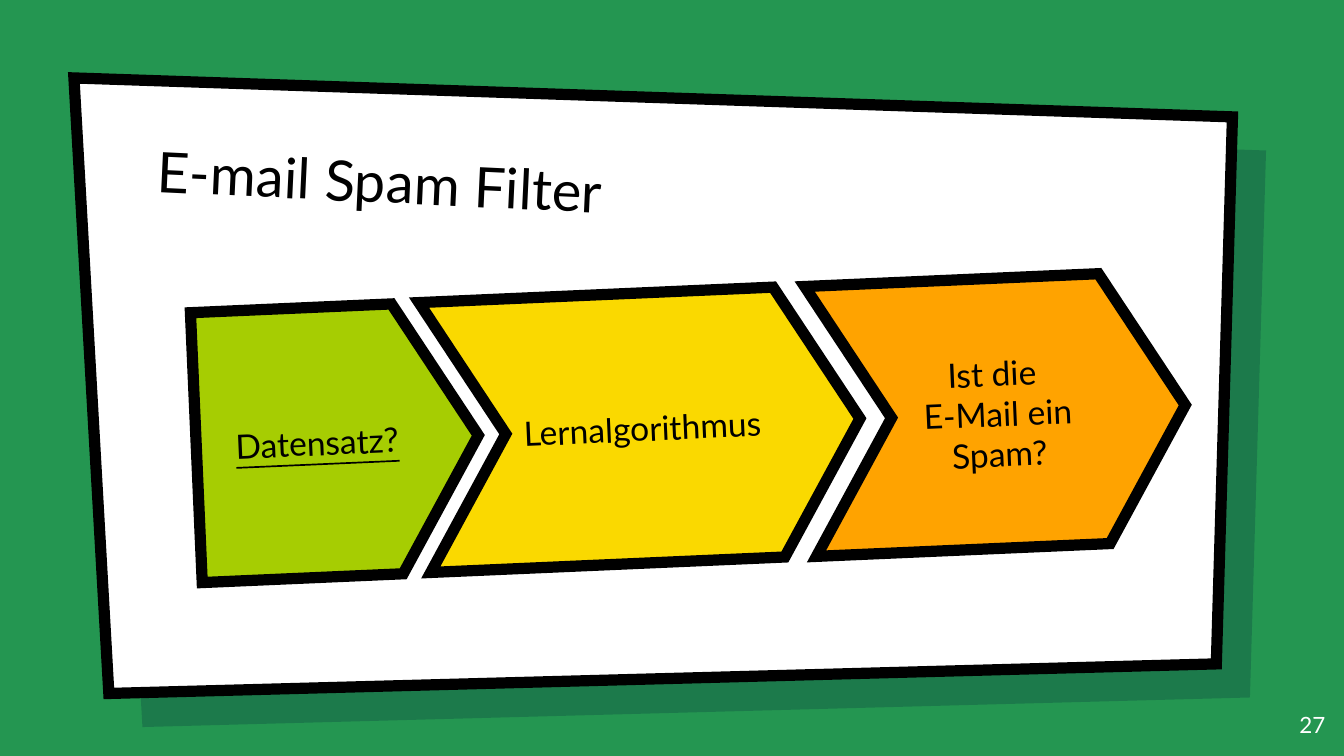
"""Build the spam filter slide: a tilted card with three process arrows."""
from lxml.etree import SubElement
from pptx import Presentation
from pptx.dml.color import RGBColor
from pptx.enum.shapes import MSO_SHAPE
from pptx.enum.text import MSO_ANCHOR, MSO_AUTO_SIZE, PP_ALIGN
from pptx.oxml.ns import qn
from pptx.util import Pt

PX = 9144
BLACK, WHITE = "000000", "FFFFFF"
TILT = 357.5


def paint(shape, color, edge=None):
    shape.shadow.inherit = False
    shape.fill.solid()
    shape.fill.fore_color.rgb = RGBColor.from_string(color)
    if edge is None:
        shape.line.fill.background()
        return
    shape.line.color.rgb = RGBColor.from_string(edge)
    shape.line.width = Pt(6)
    SubElement(shape.element.spPr.find(qn("a:ln")), qn("a:miter"), lim="800000")


def write(shape, lines, size, color, align, anchor, under=None):
    frame = shape.text_frame
    frame.word_wrap = True
    frame.auto_size = MSO_AUTO_SIZE.NONE
    frame.vertical_anchor = anchor
    frame.margin_left = frame.margin_right = 10 * PX
    frame.margin_top = frame.margin_bottom = 10 * PX
    for i, line in enumerate(lines):
        para = frame.add_paragraph() if i else frame.paragraphs[0]
        para.alignment = align
        run = para.add_run()
        run.text = line
        run.font.name = "Lato"
        run.font.size = Pt(size)
        run.font.underline = under
        run.font.color.rgb = RGBColor.from_string(color)


deck = Presentation()
deck.slide_width = 1000 * PX
deck.slide_height = deck.slide_width * 9 // 16
slide = deck.slides.add_slide(deck.slide_layouts[5])
slide.background.fill.solid()
slide.background.fill.fore_color.rgb = RGBColor.from_string("249651")
shapes = slide.shapes

corners = [(55, 58), (917, 87), (905, 494), (81, 516)]
for shift, color, edge in [(25, "001936", None), (0, WHITE, BLACK)]:
    points = [(x + shift, y + shift) for x, y in corners]
    pen = shapes.build_freeform(*points[0], scale=PX)
    pen.add_line_segments(points[1:], close=True)
    card = pen.convert_to_shape()
    paint(card, color, edge)
    if edge is None:
        tint = card.element.spPr.find(qn("a:solidFill"))[0]
        SubElement(tint, qn("a:alpha"), val="22000")

title = shapes.title
title.left, title.top = 107 * PX, 96 * PX
title.width, title.height = 769 * PX, 83 * PX
title.rotation = 2.7
write(title, ["E-mail Spam Filter"], 30, BLACK, PP_ALIGN.LEFT, MSO_ANCHOR.BOTTOM)
card.element.addnext(title.element)

number = shapes.add_textbox(936 * PX, 519 * PX, 60 * PX, 43 * PX)
write(number, ["27"], 12, WHITE, PP_ALIGN.RIGHT, MSO_ANCHOR.TOP)

steps = [
    (MSO_SHAPE.CHEVRON, 603, 207, 279, "FFA300", ["Ist die ", "E-Mail ein Spam?"], None),
    (MSO_SHAPE.CHEVRON, 316, 218, 324, "FAD900", ["Lernalgorithmus"], None),
    (MSO_SHAPE.PENTAGON, 146, 228, 210, "A6CD02", ["Datensatz?"], True),
]
for kind, left, top, width, color, lines, under in steps:
    step = shapes.add_shape(kind, left * PX, top * PX, width * PX, 201 * PX)
    step.adjustments[0] = 0.3
    step.rotation = TILT
    paint(step, color, BLACK)
    write(step, lines, 18, BLACK, PP_ALIGN.CENTER, MSO_ANCHOR.MIDDLE, under)

deck.save("out.pptx")
